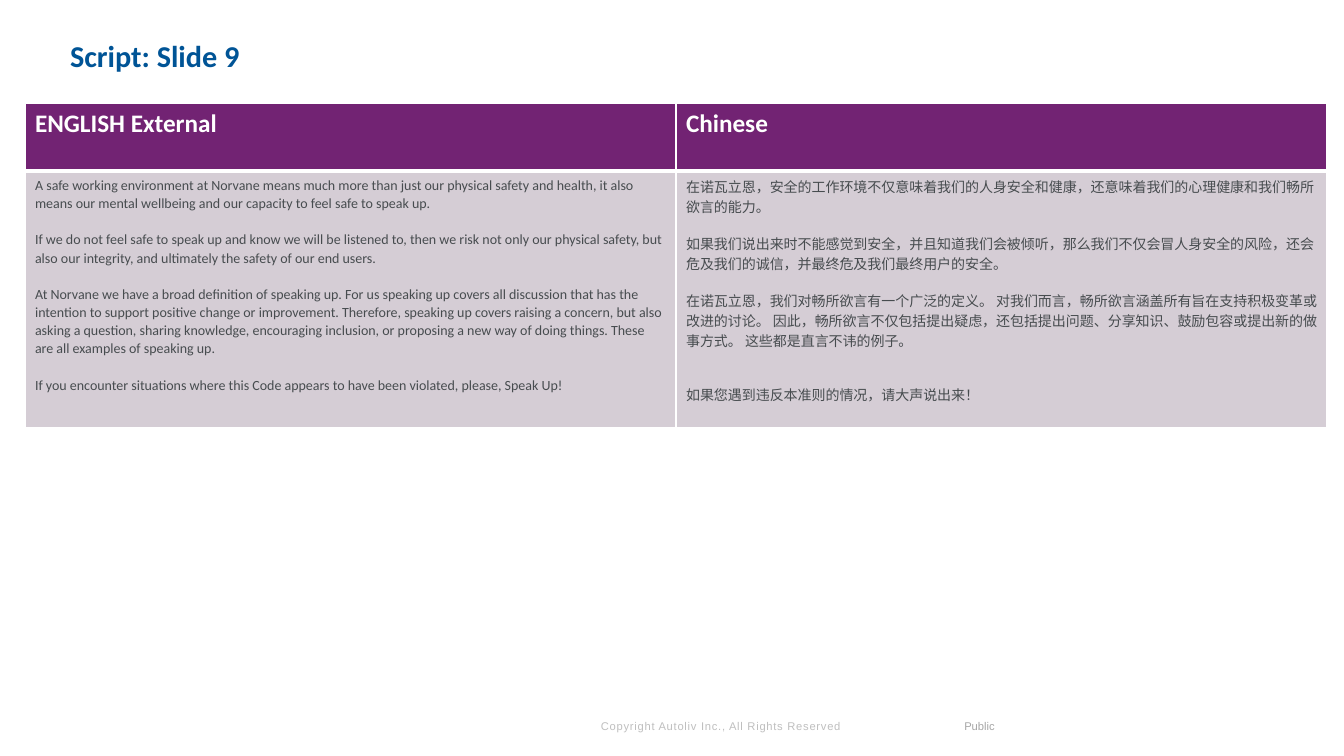
from lxml.etree import SubElement
from pptx import Presentation
from pptx.dml.color import RGBColor
from pptx.enum.shapes import MSO_SHAPE
from pptx.enum.text import MSO_ANCHOR as ANCHOR, MSO_AUTO_SIZE as AUTO, PP_ALIGN as ALIGN
from pptx.oxml.ns import qn
from pptx.util import Emu, Pt

TITLE = "Script: Slide 9"
COPYRIGHT = "Copyright Autoliv Inc., All Rights Reserved"
LABEL = "Public"
HEADERS = ["ENGLISH External", "Chinese"]
ENGLISH = [
    "A safe working environment at Norvane means much more than just our physical safety and health, it also means our mental wellbeing and our capacity to feel safe to speak up.",
    "If we do not feel safe to speak up and know we will be listened to, then we risk not only our physical safety, but also our integrity, and ultimately the safety of our end users.",
    "At Norvane we have a broad definition of speaking up. For us speaking up covers all discussion that has the intention to support positive change or improvement. Therefore, speaking up covers raising a concern, but also asking a question, sharing knowledge, encouraging inclusion, or proposing a new way of doing things. These are all examples of speaking up.",
    "If you encounter situations where this Code appears to have been violated, please, Speak Up!",
]
CHINESE = [
    "在诺瓦立恩，安全的工作环境不仅意味着我们的人身安全和健康，还意味着我们的心理健康和我们畅所欲言的能力。",
    "如果我们说出来时不能感觉到安全，并且知道我们会被倾听，那么我们不仅会冒人身安全的风险，还会危及我们的诚信，并最终危及我们最终用户的安全。",
    "在诺瓦立恩，我们对畅所欲言有一个广泛的定义。 对我们而言，畅所欲言涵盖所有旨在支持积极变革或改进的讨论。 因此，畅所欲言不仅包括提出疑虑，还包括提出问题、分享知识、鼓励包容或提出新的做事方式。 这些都是直言不讳的例子。",
    "如果您遇到违反本准则的情况，请大声说出来！",
]
# Paragraphs, space before each in points, line spacing
BODIES = [(ENGLISH, [0, 13, 13, 13], 1.07), (CHINESE, [0, 12, 12, 24], 1.0)]
ROW_HEIGHTS = [68, 257]
COLUMN_WIDTH = 651
WHITE, PURPLE, LILAC, GREY = "FFFFFF", "722373", "D5CDD5", "474C4F"


def px(n):
    return Emu(round(n * 914400 / 100.8))


def box(*lengths):
    return [px(n) for n in lengths]


def rgb(color):
    return RGBColor.from_string(color)


def add_run(p, text, size, color, font="Calibri", bold=False):
    r = p.add_run()
    r.text = text
    r.font.size, r.font.name, r.font.bold = Pt(size), font, bold
    r.font.color.rgb = rgb(color)
    return r


def set_insets(tf, left, top, right, bottom):
    tf.margin_left, tf.margin_top, tf.margin_right, tf.margin_bottom = box(left, top, right, bottom)


def style_cell(cell, fill, bottom_width):
    """Give the cell white borders and a solid fill."""
    tc_pr = cell._tc.get_or_add_tcPr()
    for side, width in zip("LRTB", (1, 1, 1, bottom_width)):
        ln = SubElement(tc_pr, qn(f"a:ln{side}"), w=str(Pt(width)))
        SubElement(SubElement(ln, qn("a:solidFill")), qn("a:srgbClr"), val=WHITE)
    cell.fill.solid()
    cell.fill.fore_color.rgb = rgb(fill)


def add_title(s):
    title = s.shapes.title
    title.left, title.top, title.width, title.height = box(60, 33, 1232, 109)
    tf = title.text_frame
    tf.auto_size, tf.vertical_anchor = AUTO.NONE, ANCHOR.TOP
    set_insets(tf, 10, 8, 0, 0)
    p = tf.paragraphs[0]
    p.alignment, p.line_spacing = ALIGN.LEFT, 0.9
    add_run(p, TITLE, 21.6, "005496", bold=True)


def add_script_table(s):
    frame = s.shapes.add_table(2, 2, *box(25, 103, 2 * COLUMN_WIDTH, sum(ROW_HEIGHTS)))
    table = frame.table
    for row, height in zip(table.rows, ROW_HEIGHTS):
        row.height = px(height)
    for i, (header, (texts, gaps, spacing)) in enumerate(zip(HEADERS, BODIES)):
        table.columns[i].width = px(COLUMN_WIDTH)
        head, body = table.cell(0, i), table.cell(1, i)
        style_cell(head, PURPLE, 3)
        style_cell(body, LILAC, 1)
        add_run(head.text_frame.paragraphs[0], header, 18, WHITE, bold=True)
        tf = body.text_frame
        for j, (text, gap) in enumerate(zip(texts, gaps)):
            p = tf.add_paragraph() if j else tf.paragraphs[0]
            p.space_before, p.line_spacing = Pt(gap), spacing
            add_run(p, text, 10, GREY)


def add_footer(s):
    tf = s.shapes.add_textbox(*box(591, 715, 274, 23)).text_frame
    tf.word_wrap, tf.vertical_anchor = True, ANCHOR.BOTTOM
    r = add_run(tf.paragraphs[0], COPYRIGHT, 8, "BFBFBF", "Arial")
    r.font._element.set("spc", "50")

    label = s.shapes.add_shape(MSO_SHAPE.RECTANGLE, *box(898, 709, 97, 24))
    label.shadow.inherit = False
    label.line.fill.background()
    label.fill.solid()
    label.fill.fore_color.rgb = rgb(WHITE)
    color = label._element.spPr.find(qn("a:solidFill")).find(qn("a:srgbClr"))
    SubElement(color, qn("a:alpha"), val="50000")
    tf = label.text_frame
    tf.vertical_anchor = ANCHOR.BOTTOM
    set_insets(tf, 0, 0, 0, 0)
    p = tf.paragraphs[0]
    p.alignment = ALIGN.RIGHT
    add_run(p, LABEL, 8, "A6A6A6", "Arial")


def main():
    prs = Presentation()
    prs.slide_width, prs.slide_height = box(1344, 756)
    s = prs.slides.add_slide(prs.slide_layouts[5])
    add_footer(s)
    add_title(s)
    add_script_table(s)
    prs.save("out.pptx")


if __name__ == "__main__":
    main()
